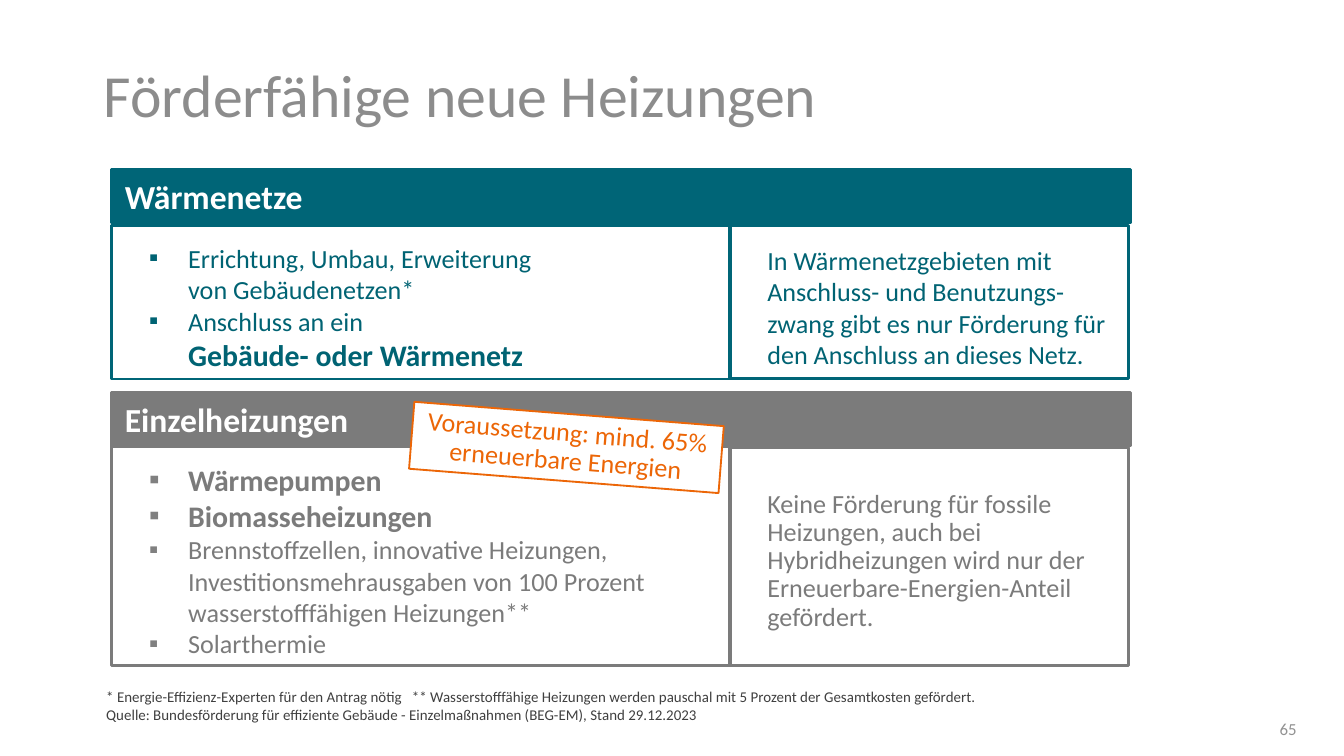
from copy import deepcopy

from lxml.etree import SubElement
from pptx import Presentation
from pptx.dml.color import RGBColor
from pptx.enum.shapes import MSO_SHAPE
from pptx.enum.text import MSO_ANCHOR, MSO_AUTO_SIZE, PP_ALIGN
from pptx.oxml.ns import qn
from pptx.util import Inches, Pt

COLORS = {
    "title": "8C8C8C", "teal": "006577", "teal_text": "006373",
    "gray": "7B7B7B", "bullet": "808080", "orange": "EC6607",
    "white": "FFFFFF", "note": "3F3F3F", "number": "929292",
}
LEFT, SPLIT = 0.83, 5.43
WIDTH, LIST_WIDTH, REMARK_WIDTH = 7.58, 4.61, 2.97
HEADER_HEIGHT = 0.4
LIST_INSETS = (0.08, 0.12, 0.08, 0.05)
REMARK_INSETS = (0.08, 0.12, 0.12, 0.05)


class SlideBuilder:
    """Holds the style and the current slide and adds each kind of element."""

    font = "Calibri"

    def __init__(self, s):
        self.s = s

    def color(self, name):
        return RGBColor.from_string(COLORS[name])

    def place(self, sp, box):
        sp.left, sp.top, sp.width, sp.height = [Inches(v) for v in box]

    def outline(self, sp, fill, line, width=1.5):
        if fill:
            sp.fill.solid()
            sp.fill.fore_color.rgb = self.color(fill)
        else:
            sp.fill.background()
        sp.line.color.rgb = self.color(line)
        sp.line.width = Pt(width)

    def frame(self, sp, anchor=MSO_ANCHOR.MIDDLE, insets=(0.1, 0.05, 0.1, 0.05),
              wrap=True, grow=False):
        tf = sp.text_frame
        tf.auto_size = MSO_AUTO_SIZE.SHAPE_TO_FIT_TEXT if grow else MSO_AUTO_SIZE.NONE
        tf.word_wrap = wrap
        tf.vertical_anchor = anchor
        tf.margin_left, tf.margin_top, tf.margin_right, tf.margin_bottom = [
            Inches(v) for v in insets]
        return tf

    def runs(self, p, parts, color):
        for text, size, bold in parts:
            for i, line in enumerate(text.split("\n")):
                if i:
                    p.add_line_break()
                    p._p[-1].append(deepcopy(r._r.rPr))
                if line:
                    r = p.add_run()
                    r.text = line
                    r.font.name = self.font
                    r.font.size = Pt(size)
                    r.font.bold = bold
                    r.font.color.rgb = self.color(color)

    def paragraph(self, tf, parts, color, align=PP_ALIGN.LEFT, spacing=1.0, indent=0):
        p = tf.paragraphs[0]
        p.alignment = align
        p.line_spacing = spacing
        p._p.get_or_add_pPr().set("marL", str(Inches(indent)))
        self.runs(p, parts, color)

    def title(self, text):
        sp = self.s.shapes.title
        self.place(sp, (0.67, 0.44, 8.62, 0.53))
        tf = self.frame(sp, MSO_ANCHOR.TOP, (0.1, 0.05, 0.1, 0))
        self.paragraph(tf, [(text, 32, False)], "title", spacing=0.9)

    def rect(self, box, fill, line, width=1.5):
        sp = self.s.shapes.add_shape(MSO_SHAPE.RECTANGLE, *[Inches(v) for v in box])
        sp.shadow.inherit = False
        self.outline(sp, fill, line, width)
        return sp

    def header(self, top, text, color):
        sp = self.rect((LEFT, top, WIDTH, HEADER_HEIGHT), color, color)
        self.paragraph(self.frame(sp, grow=True), [(text, 18, True)], "white")

    def bullet(self, p, color):
        pPr = p._p.get_or_add_pPr()
        pPr.set("marL", str(Inches(0.49)))
        pPr.set("indent", str(Inches(-0.29)))
        clr = SubElement(pPr, qn("a:buClr"))
        SubElement(clr, qn("a:srgbClr")).set("val", COLORS[color])
        SubElement(pPr, qn("a:buFont")).set("typeface", self.font)
        SubElement(pPr, qn("a:buChar")).set("char", "▪")

    def bullets(self, idx, top, height, items, line, color, bullet_color):
        sp = self.s.placeholders[idx]
        self.place(sp, (LEFT, top, LIST_WIDTH, height))
        self.outline(sp, None, line)
        tf = self.frame(sp, insets=LIST_INSETS)
        for i, parts in enumerate(items):
            p = tf.add_paragraph() if i else tf.paragraphs[0]
            self.bullet(p, bullet_color)
            p.space_before = Pt(0)
            self.runs(p, parts, color)

    def remark(self, top, height, text, line, color, spacing=1.0):
        sp = self.rect((SPLIT, top, REMARK_WIDTH, height), None, line)
        tf = self.frame(sp, insets=REMARK_INSETS)
        self.paragraph(tf, [(text, 14, False)], color, spacing=spacing, indent=0.2)

    def callout(self, box, text, color, angle):
        sp = self.rect(box, "white", color, 1)
        sp.rotation = angle
        self.paragraph(self.frame(sp), [(text, 14, False)], color, PP_ALIGN.CENTER, 0.9)

    def label(self, box, text, size, color, align=PP_ALIGN.LEFT, **options):
        sp = self.s.shapes.add_textbox(*[Inches(v) for v in box])
        self.paragraph(self.frame(sp, **options), [(text, size, False)], color, align)


def main():
    prs = Presentation()
    prs.slide_width = Inches(10)
    prs.slide_height = prs.slide_width * 9 // 16
    b = SlideBuilder(prs.slides.add_slide(prs.slide_layouts[3]))
    b.title("Förderfähige neue Heizungen")

    b.header(1.26, "Wärmenetze", "teal")
    b.bullets(1, 1.68, 1.14, [
        [("Errichtung, Umbau, Erweiterung \nvon Gebäudenetzen*", 14, False)],
        [("Anschluss an ein \n", 14, False), ("Gebäude- oder Wärmenetz", 16, True)],
    ], "teal", "teal_text", "teal_text")
    b.remark(1.68, 1.14, "In Wärmenetzgebieten mit Anschluss- und Benutzungs-zwang gibt es "
             "nur Förderung für den Anschluss an dieses Netz.", "teal", "teal_text")

    b.header(2.92, "Einzelheizungen", "gray")
    b.bullets(2, 3.32, 1.63, [
        [("Wärmepumpen", 16, True)],
        [("Biomasseheizungen", 16, True)],
        [("Brennstoffzellen, innovative Heizungen, Investitionsmehrausgaben von "
          "100 Prozent wasserstofffähigen Heizungen**", 14, False)],
        [("Solarthermie", 14, False)],
    ], "gray", "gray", "bullet")
    b.remark(3.33, 1.62, "Keine Förderung für fossile\nHeizungen, auch bei\n"
             "Hybridheizungen wird nur der Erneuerbare-Energien-Anteil gefördert.",
             "gray", "gray", 0.9)
    b.callout((3.06, 3.08, 2.31, 0.5),
              "Voraussetzung: mind. 65% erneuerbare Energien", "orange", 4.5)

    b.label((0.67, 5.06, 7.68, 0.37),
            "* Energie-Effizienz-Experten für den Antrag nötig   ** Wasserstofffähige Heizungen "
            "werden pauschal mit 5 Prozent der Gesamtkosten gefördert.\n"
            "Quelle: Bundesförderung für effiziente Gebäude - Einzelmaßnahmen (BEG-EM), "
            "Stand 29.12.2023", 8, "note",
            anchor=MSO_ANCHOR.BOTTOM, insets=(0.12, 0.05, 0.1, 0.05), grow=True)
    b.label((9.53, 5.29, 0.11, 0.27), "65", 9, "number", PP_ALIGN.CENTER,
            insets=(0, 0, 0, 0), wrap=False)
    prs.save("out.pptx")


if __name__ == "__main__":
    main()
